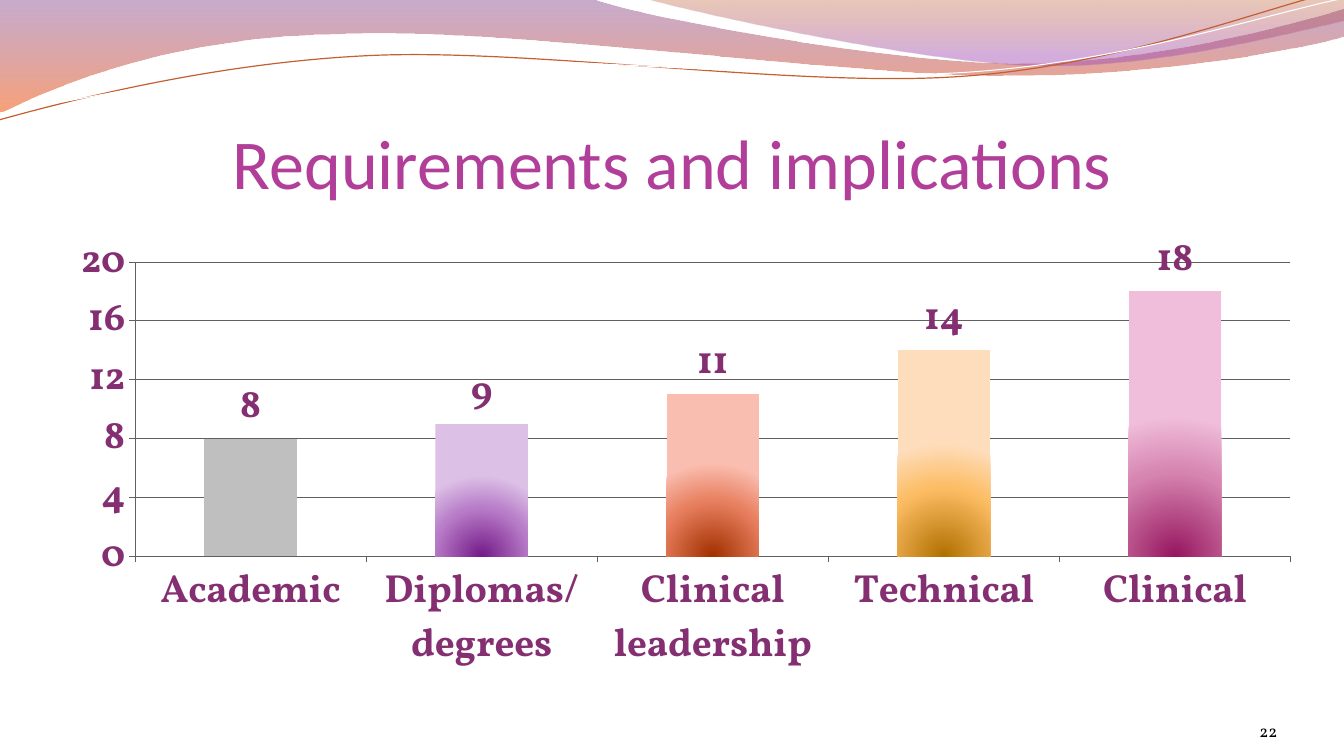
from pptx import Presentation
from pptx.chart.data import CategoryChartData
from pptx.dml.color import RGBColor
from pptx.enum.chart import XL_CHART_TYPE, XL_LABEL_POSITION, XL_TICK_MARK
from pptx.enum.shapes import MSO_SHAPE
from pptx.enum.text import MSO_ANCHOR, MSO_AUTO_SIZE, PP_ALIGN
from pptx.oxml import parse_xml
from pptx.oxml.ns import nsdecls
from pptx.util import Inches, Pt

TITLE_PINK = RGBColor(0xB1, 0x3F, 0x9A)
CHART_PURPLE = RGBColor(0x85, 0x2F, 0x73)
GRID_GRAY = RGBColor(0x60, 0x60, 0x60)
BAR_GRAY = RGBColor(0xBF, 0xBF, 0xBF)
ORANGE = RGBColor(0xC4, 0x5F, 0x30)
WHITE = RGBColor(0xFF, 0xFF, 0xFF)
BLACK = RGBColor(0, 0, 0)
VIOLET = RGBColor(0x83, 0x45, 0x91)
CORAL = RGBColor(0xF3, 0x53, 0x07)
RUST = RGBColor(0xB7, 0x49, 0x15)
LILAC = RGBColor(0xA1, 0x4B, 0xB4)
BAR_GRADIENTS = [
    (RGBColor(0x74, 0x1A, 0x88), RGBColor(0xB8, 0x7C, 0xC8), RGBColor(0xDC, 0xC0, 0xE6)),
    (RGBColor(0xA2, 0x30, 0x00), RGBColor(0xE8, 0x80, 0x60), RGBColor(0xFA, 0xBE, 0xB0)),
    (RGBColor(0xB0, 0x70, 0x00), RGBColor(0xFC, 0xBC, 0x62), RGBColor(0xFE, 0xDD, 0xBC)),
    (RGBColor(0x96, 0x16, 0x5F), RGBColor(0xD6, 0x84, 0xB0), RGBColor(0xF0, 0xBE, 0xDA)),
]

RADIAL = '<a:path path="circle"><a:fillToRect l="50000" t="100000" r="50000"/></a:path>'
DOWNWARD = '<a:lin ang="5400000" scaled="0"/>'
UNITS_PER_INCH = 1000


def gradient_fill(stops, direction):
    stop_xml = "".join(
        f'<a:gs pos="{position * 1000}"><a:srgbClr val="{color}">'
        f'<a:alpha val="{opacity * 1000}"/></a:srgbClr></a:gs>'
        for position, color, opacity in stops
    )
    return parse_xml(
        f'<a:gradFill {nsdecls("a")} rotWithShape="1"><a:gsLst>{stop_xml}</a:gsLst>'
        f"{direction}</a:gradFill>"
    )


def add_curve(shapes, start, segments, close):
    points = [
        (segment[i] * UNITS_PER_INCH, segment[i + 1] * UNITS_PER_INCH)
        for segment in segments for i in range(0, len(segment), 2)
    ]
    builder = shapes.build_freeform(
        start[0] * UNITS_PER_INCH, start[1] * UNITS_PER_INCH,
        scale=Inches(1) / UNITS_PER_INCH,
    )
    builder.add_line_segments(points, close=close)
    curve = builder.convert_to_shape()
    line_steps = iter(curve._element.xpath(".//a:lnTo"))
    for segment in segments:
        steps = [next(line_steps) for _ in range(len(segment) // 2)]
        if len(steps) == 3:
            bezier = parse_xml(f'<a:cubicBezTo {nsdecls("a")}/>')
            steps[0].addprevious(bezier)
            for step in steps:
                bezier.append(step[0])
                step.getparent().remove(step)
    return curve


presentation = Presentation()
presentation.slide_width = Inches(13.33)
presentation.slide_height = Inches(7.5)
slide = presentation.slides.add_slide(presentation.slide_layouts[5])

left_wave = [
    (5.87, -0.01), (6.34, 0.17, 8.85, 0.63, 10.11, 0.63),
    (11.38, 0.63, 12.78, 0.26, 13.33, 0.09), (13.35, 0.36),
    (13.11, 0.44, 11.6, 0.76, 9.94, 0.75), (8.29, 0.75, 5.09, 0.28, 3.43, 0.34),
    (1.72, 0.36, 0.61, 0.83, -0.01, 1.13),
]
right_wave = [
    (6.79, 0.11, 9.09, 0.62, 10.25, 0.65),
    (11.41, 0.69, 12.82, 0.32, 13.33, 0.21), (13.33, 0),
]
orange_curve = [
    (0.64, 1.01, 2.11, 0.62, 3.69, 0.55), (5.27, 0.48, 7.9, 0.87, 9.5, 0.76),
    (11.1, 0.66, 12.52, 0.08, 13.31, -0.1),
]
white_curve = [
    (0.63, 1.03, 2.18, 0.66, 3.78, 0.59), (5.37, 0.53, 7.96, 0.82, 9.55, 0.72),
    (11.15, 0.62, 12.55, 0.14, 13.34, -0.02),
]

for start, segments, stops, line_color, line_width in [
    ((0, 0), left_wave, [(0, VIOLET, 45), (100, CORAL, 55)], None, 0),
    ((6.39, -0.01), right_wave, [(0, RUST, 30), (80, LILAC, 45)], None, 0),
    ((-0.01, 1.19), orange_curve, None, ORANGE, 0.85),
    ((0, 1.12), white_curve, None, WHITE, 0.75),
]:
    shape = add_curve(slide.shapes, start, segments, stops is not None)
    shape.shadow.inherit = False
    shape.fill.background()
    if stops:
        shape.line.fill.background()
        properties = shape._element.spPr
        properties.replace(properties.find("{*}noFill"), gradient_fill(stops, DOWNWARD))
    else:
        shape.line.color.rgb = line_color
        shape.line.width = Pt(line_width)

side_panel = slide.shapes.add_shape(
    MSO_SHAPE.RECTANGLE, 0, Inches(1.21), Inches(3.07), Inches(6.29)
)
side_panel.shadow.inherit = False
side_panel.fill.solid()
side_panel.fill.fore_color.rgb = WHITE
side_panel.line.fill.background()

title = slide.shapes.title
slide.shapes._spTree.append(title._element)
title.left, title.top = Inches(0.67), Inches(0.77)
title.width, title.height = Inches(12), Inches(1.25)
page_number = slide.shapes.add_textbox(Inches(11.56), Inches(6.95), Inches(1.11), Inches(0.4))

for shape, text, alignment, font_name, size, color, top_inset in [
    (title, "Requirements and implications", PP_ALIGN.CENTER, "Calibri", 50, TITLE_PINK, 0.05),
    (page_number, "22", PP_ALIGN.RIGHT, "Vollkorn", 12, BLACK, 0),
]:
    frame = shape.text_frame
    frame.text = text
    frame.word_wrap = True
    frame.auto_size = MSO_AUTO_SIZE.NONE
    frame.vertical_anchor = MSO_ANCHOR.BOTTOM
    frame.margin_left = frame.margin_right = frame.margin_bottom = 0
    frame.margin_top = Inches(top_inset)
    paragraph = frame.paragraphs[0]
    paragraph.alignment = alignment
    font = paragraph.runs[0].font
    font.name, font.size = font_name, Pt(size)
    font.color.rgb = color

chart_data = CategoryChartData()
chart_data.categories = [
    "Academic", "Diplomas/degrees", "Clinical leadership", "Technical", "Clinical",
]
chart_data.add_series("Series 1", [8, 9, 11, 14, 18])
chart = slide.shapes.add_chart(
    XL_CHART_TYPE.COLUMN_CLUSTERED,
    Inches(0.56), Inches(2.25), Inches(12.48), Inches(4.52), chart_data,
).chart
chart.has_title = False
chart.has_legend = False
chart.font.name = "Vollkorn"
chart.font.size = Pt(28)
chart.font.bold = True
chart.font.color.rgb = CHART_PURPLE

value_axis = chart.value_axis
value_axis.minimum_scale = 0
value_axis.maximum_scale = 20
value_axis.major_unit = 4
value_axis.has_major_gridlines = True
for line in (
    value_axis.format.line, chart.category_axis.format.line,
    value_axis.major_gridlines.format.line,
):
    line.color.rgb = GRID_GRAY
    line.width = Pt(0.75)
for axis in (value_axis, chart.category_axis):
    axis.major_tick_mark = XL_TICK_MARK.OUTSIDE

plot = chart.plots[0]
plot.gap_width = 150
plot.vary_by_categories = False
plot.has_data_labels = True
plot.data_labels.show_value = True
plot.data_labels.position = XL_LABEL_POSITION.OUTSIDE_END

for index in range(5):
    fill = plot.series[0].points[index].format.fill
    fill.solid()
    fill.fore_color.rgb = BAR_GRAY
bar_properties = chart._chartSpace.xpath(".//c:dPt/c:spPr")
for properties, colors in zip(bar_properties[1:], BAR_GRADIENTS):
    stops = [(position, color, 100) for position, color in zip((0, 60, 100), colors)]
    properties.replace(properties[0], gradient_fill(stops, RADIAL))

plot_area = chart._chartSpace.xpath(".//c:plotArea")[0]
for layout in plot_area.xpath("c:layout"):
    plot_area.remove(layout)
plot_area.insert(0, parse_xml(
    f'<c:layout {nsdecls("c")}><c:manualLayout><c:layoutTarget val="inner"/>'
    '<c:xMode val="edge"/><c:yMode val="edge"/>'
    f'<c:x val="{0.78 / 12.48}"/><c:y val="{0.35 / 4.52}"/>'
    f'<c:w val="{11.46 / 12.48}"/><c:h val="{2.92 / 4.52}"/></c:manualLayout></c:layout>'
))

presentation.save("out.pptx")
